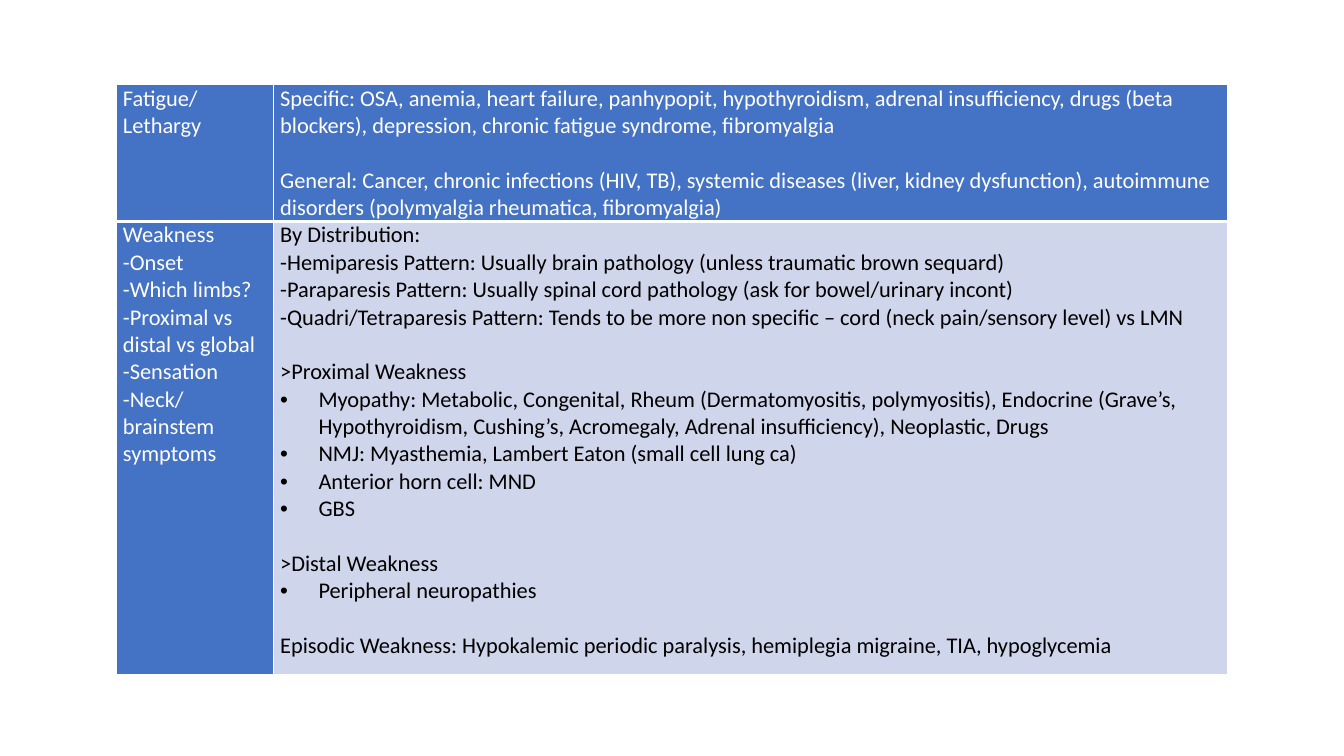
from pptx import Presentation
from pptx.dml.color import RGBColor as Rgb
from pptx.oxml import parse_xml
from pptx.oxml.ns import nsdecls
from pptx.util import Inches, Pt

COLORS = {"white": "FFFFFF", "black": "000000", "blue": "4472C4", "pale": "CFD5EA"}
FONT = "Calibri"
SIZE = 16
LINE_GAP = 19.5  # one line of 16 pt text

FATIGUE = ["Fatigue/ Lethargy"]
FATIGUE_CAUSES = [
    "Specific: OSA, anemia, heart failure, panhypopit, hypothyroidism, adrenal insufficiency, "
    "drugs (beta blockers), depression, chronic fatigue syndrome, fibromyalgia",
    "General: Cancer, chronic infections (HIV, TB), systemic diseases (liver, kidney dysfunction), "
    "autoimmune disorders (polymyalgia rheumatica, fibromyalgia)",
]
WEAKNESS = [
    "Weakness", "-Onset", "-Which limbs?", "-Proximal vs distal vs global",
    "-Sensation", "-Neck/ brainstem symptoms",
]
WEAKNESS_CAUSES = [
    "By Distribution:",
    "-Hemiparesis Pattern: Usually brain pathology (unless traumatic brown sequard)",
    "-Paraparesis Pattern: Usually spinal cord pathology (ask for bowel/urinary incont)",
    "-Quadri/Tetraparesis Pattern: Tends to be more non specific – cord "
    "(neck pain/sensory level) vs LMN",
    ">Proximal Weakness",
    "• Myopathy: Metabolic, Congenital, Rheum (Dermatomyositis, polymyositis), Endocrine "
    "(Grave’s, Hypothyroidism, Cushing’s, Acromegaly, Adrenal insufficiency), Neoplastic, Drugs",
    "• NMJ: Myasthemia, Lambert Eaton (small cell lung ca)",
    "• Anterior horn cell: MND",
    "• GBS",
    ">Distal Weakness",
    "• Peripheral neuropathies",
    "Episodic Weakness: Hypokalemic periodic paralysis, hemiplegia migraine, TIA, hypoglycemia",
]
SECTION_STARTS = ("General", ">", "Episodic")


def write_text(para, text, color="black", gap=0):
    """Fill a paragraph; a leading bullet sign becomes a real bullet."""
    bulleted = text.startswith("• ")
    span = para.add_run()
    span.text = text.removeprefix("• ")
    span.font.name, span.font.size, span.font.bold = FONT, Pt(SIZE), False
    span.font.color.rgb = Rgb.from_string(COLORS[color])
    para.space_before = Pt(gap)
    if bulleted:
        properties = para._p.get_or_add_pPr()
        properties.set("marL", str(Inches(0.38)))
        properties.set("indent", str(Inches(-0.38)))
        properties.append(parse_xml(f'<a:buFont {nsdecls("a")} typeface="Arial"/>'))
        properties.append(parse_xml(f'<a:buChar {nsdecls("a")} char="•"/>'))


class SlideBuilder:
    def __init__(self, deck):
        self.slide = deck.slides.add_slide(deck.slide_layouts[6])

    def add_table(self, left, top, widths, heights, rows):
        frame = self.slide.shapes.add_table(
            len(heights), len(widths), Inches(left), Inches(top),
            Inches(sum(widths)), Inches(sum(heights)))
        table = frame.table
        table.first_row = table.horz_banding = False
        for column, width in zip(table.columns, widths):
            column.width = Inches(width)
        for row, height, contents in zip(table.rows, heights, rows):
            row.height = Inches(height)
            for cell, (lines, fill, color) in zip(row.cells, contents):
                self.fill_cell(cell, lines, fill, color)
        for upper, lower in zip(table.rows[0].cells, table.rows[1].cells):
            self.add_borders(upper, bottom=3)
            self.add_borders(lower, top=3)

    def fill_cell(self, cell, lines, fill, color):
        cell.margin_left = cell.margin_right = Inches(0.07)
        cell.margin_top = cell.margin_bottom = 0
        cell.fill.solid()
        cell.fill.fore_color.rgb = Rgb.from_string(COLORS[fill])
        frame = cell.text_frame
        for index, line in enumerate(lines):
            para = frame.add_paragraph() if index else frame.paragraphs[0]
            gap = LINE_GAP if line.startswith(SECTION_STARTS) else 0
            write_text(para, line, color=color, gap=gap)

    def add_borders(self, cell, top=1, bottom=1):
        properties = cell._tc.get_or_add_tcPr()
        sides = {"lnL": 1, "lnR": 1, "lnT": top, "lnB": bottom}
        for index, (side, width) in enumerate(sides.items()):
            properties.insert(index, parse_xml(
                f'<a:{side} {nsdecls("a")} w="{Pt(width)}"><a:solidFill>'
                f'<a:srgbClr val="{COLORS["white"]}"/></a:solidFill></a:{side}>'))


def main():
    deck = Presentation()
    deck.slide_width, deck.slide_height = Inches(13.33), Inches(7.5)
    SlideBuilder(deck).add_table(
        1.15, 0.84, widths=[1.56, 9.47], heights=[1.28, 4.49],
        rows=[
            [(FATIGUE, "blue", "white"), (FATIGUE_CAUSES, "blue", "white")],
            [(WEAKNESS, "blue", "white"), (WEAKNESS_CAUSES, "pale", "black")],
        ])
    deck.save("out.pptx")


if __name__ == "__main__":
    main()
